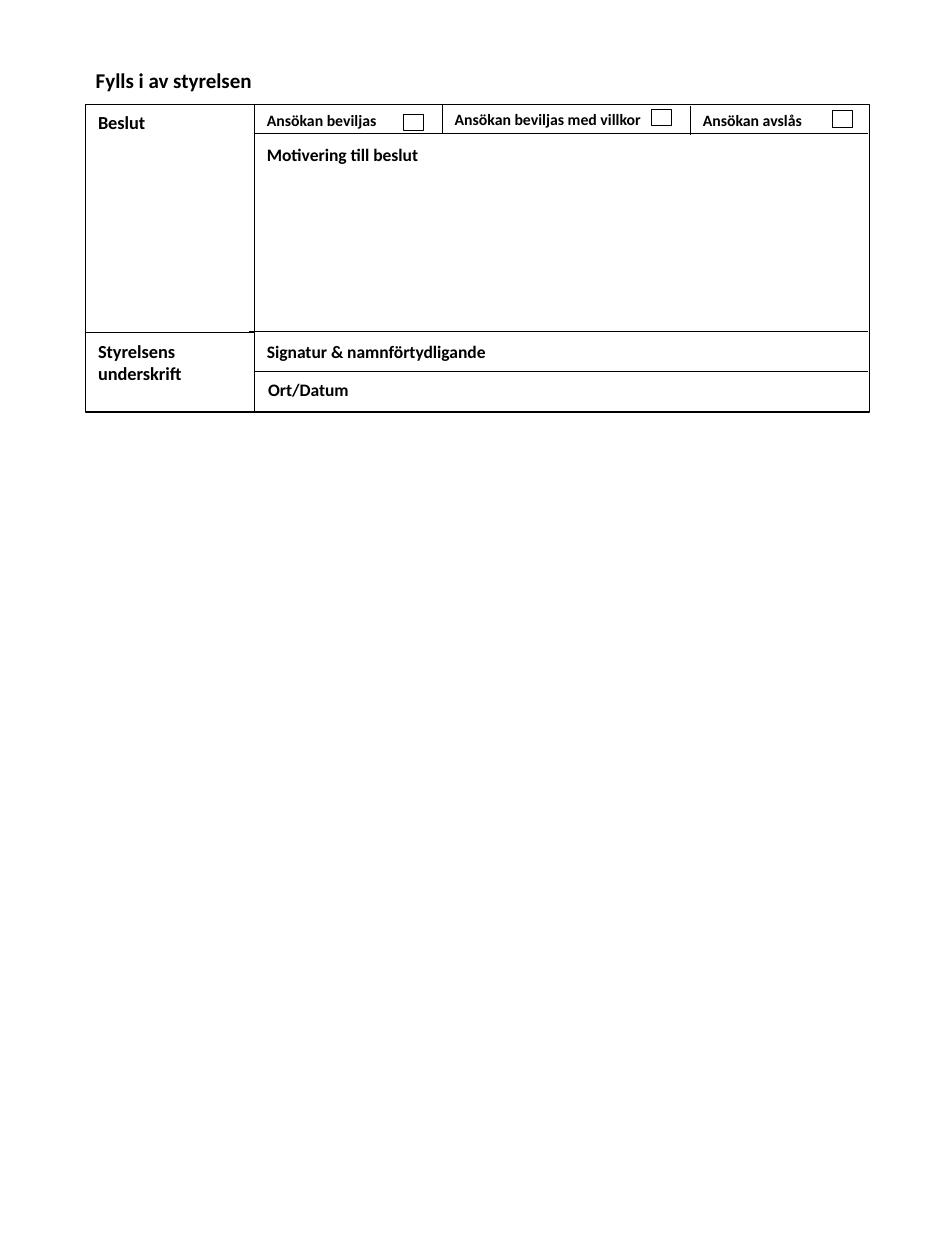
from lxml import etree
from pptx import Presentation
from pptx.dml.color import RGBColor
from pptx.enum.shapes import MSO_CONNECTOR, MSO_SHAPE
from pptx.enum.text import MSO_ANCHOR, MSO_AUTO_SIZE, PP_ALIGN
from pptx.oxml.ns import qn
from pptx.util import Inches, Pt

RECT = MSO_SHAPE.RECTANGLE
LINE = MSO_CONNECTOR.STRAIGHT
MIDDLE = MSO_ANCHOR.MIDDLE
LEFT = PP_ALIGN.LEFT
NO_FIT = MSO_AUTO_SIZE.NONE

COLORS = {"ink": "000000"}
FONT = "Calibri"

TITLE = "Fylls i av styrelsen"
X, Y, WIDTH, HEIGHT = 0.68, 0.83, 6.22, 2.44
SPLIT, SIGN = 2.02, 2.63
EDGE, END = 6.89, Y + HEIGHT

LABELS = [
    ("Beslut", X, Y, 2.2, 0.29, 10.5),
    ("Styrelsens underskrift", X, 2.65, 1.1, 0.45, 10.5),
    ("Motivering till beslut", SPLIT, 1.09, 2.2, 0.27, 10),
    ("Signatur & namnförtydligande", SPLIT, 2.66, 2.2, 0.27, 10),
    ("Ort/Datum", 2.03, 2.96, 2.2, 0.27, 10),
    ("Ansökan beviljas", SPLIT, Y, 1.1, 0.25, 9),
    ("Ansökan beviljas med villkor", 3.51, 0.82, 1.81, 0.25, 9),
    ("Ansökan avslås", 5.48, Y, 1.1, 0.25, 9),
]
FRAMES = [(X, Y, WIDTH, HEIGHT), (X, Y, SPLIT - X, 1.81)]
CHECKS = [(3.2, 0.91), (5.17, 0.87), (6.61, 0.88)]
RULES = [
    (SPLIT, 1.06, EDGE, 1.06),
    (3.51, Y, 3.51, 1.06),
    (5.48, 0.84, 5.48, 1.07),
    (SPLIT, SIGN, SPLIT, END),
    (1.98, SIGN, EDGE, SIGN),
    (SPLIT, 2.95, EDGE, 2.95),
]


def ink(line, width):
    line.color.rgb = RGBColor.from_string(COLORS["ink"])
    line.width = Pt(width)


def add_box(slide, place, width):
    box = slide.shapes.add_shape(RECT, *map(Inches, place))
    box.shadow.inherit = False
    box.fill.background()
    ink(box.line, width)


def add_rule(slide, ends):
    rule = slide.shapes.add_connector(LINE, *map(Inches, ends))
    ink(rule.line, 0.75)
    etree.SubElement(rule.element.spPr, qn("a:effectLst"))


def write(shape, text, size):
    frame = shape.text_frame
    frame.word_wrap = True
    frame.text = text
    para = frame.paragraphs[0]
    para.alignment = LEFT
    para.font.name = FONT
    para.font.size = Pt(size)
    para.font.bold = True
    para.font.color.rgb = RGBColor.from_string(COLORS["ink"])


def main():
    deck = Presentation()
    deck.slide_width, deck.slide_height = Inches(7.5), Inches(10)
    slide = deck.slides.add_slide(deck.slide_layouts[5])

    title = slide.shapes.title
    title.left, title.top = Inches(0.66), Inches(0.43)
    title.width, title.height = Inches(WIDTH), Inches(0.42)
    write(title, TITLE, 12)
    title.text_frame.auto_size = NO_FIT
    title.text_frame.vertical_anchor = MIDDLE

    for place in FRAMES:
        add_box(slide, place, 0.75)
    for left, top in CHECKS:
        add_box(slide, (left, top, 0.16, 0.13), 0.5)
    for ends in RULES:
        add_rule(slide, ends)
    for text, *place, size in LABELS:
        write(slide.shapes.add_textbox(*map(Inches, place)), text, size)

    deck.save("out.pptx")


if __name__ == "__main__":
    main()
